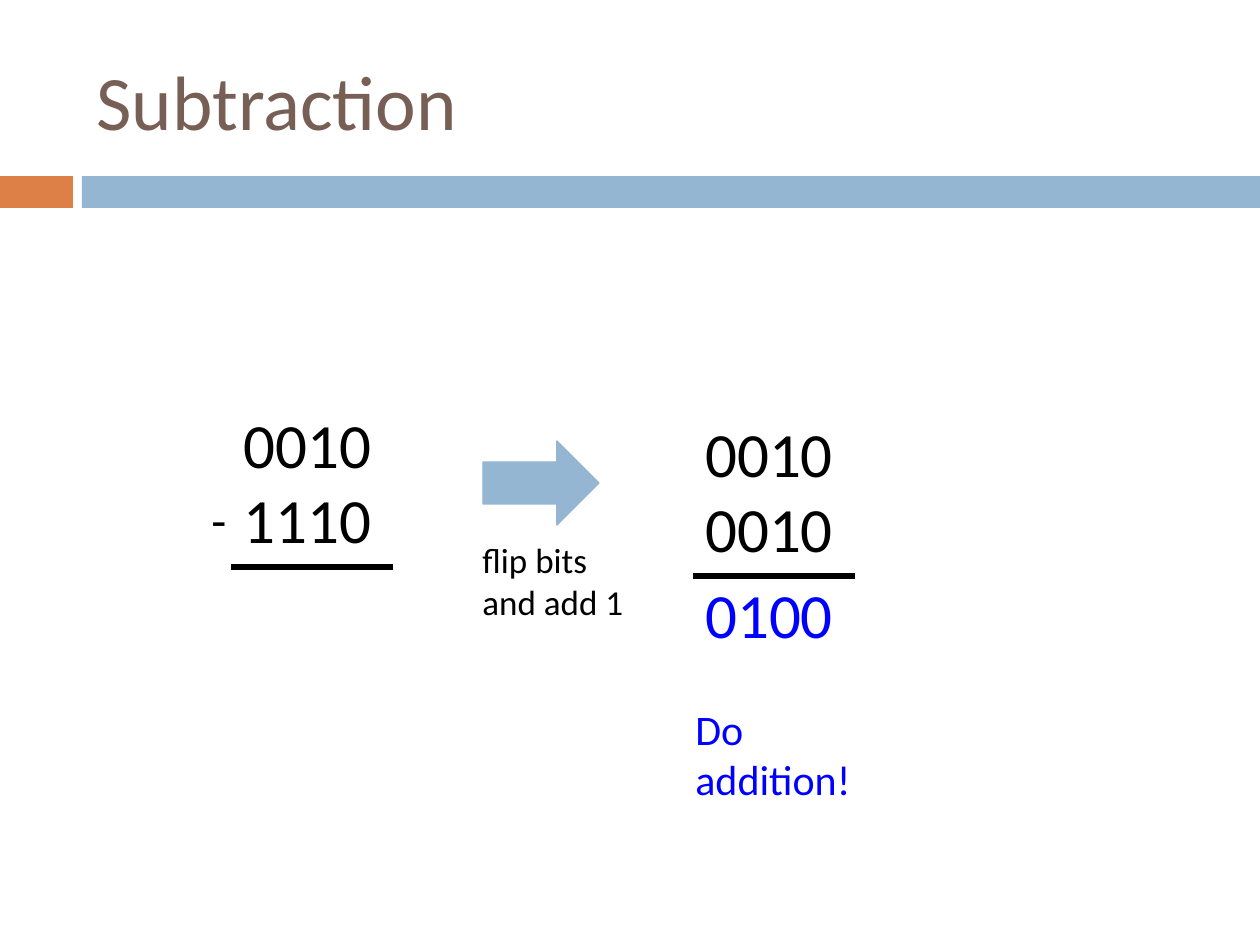
"""Build a slide that turns binary subtraction into addition."""
import pptx
import pptx.util
import pptx.dml.color
import pptx.enum.shapes
import pptx.enum.text
import pptx.oxml.ns
import lxml.etree

PX = 914400 / 126
INK = {"title": "775F55", "text": "000000", "sum": "0000FF",
       "blue": "94B6D2", "rust": "DD8047"}
KIND = pptx.enum.shapes.MSO_SHAPE

deck = pptx.Presentation()
deck.slide_width, deck.slide_height = round(1260 * PX), round(945 * PX)
slide = deck.slides.add_slide(deck.slide_layouts[5])
items = slide.shapes


def rgb(name):
    return pptx.dml.color.RGBColor.from_string(INK[name])


def put(text, box, size=36, ink="text", wrap=False, shape=None):
    fit = pptx.enum.text.MSO_AUTO_SIZE
    place = [round(n * PX) for n in box]
    if shape is None:
        shape = items.add_textbox(*place)
        mode = fit.SHAPE_TO_FIT_TEXT
    else:
        shape.left, shape.top, shape.width, shape.height = place
        mode = fit.NONE
    frame = shape.text_frame
    frame.text = text
    frame.word_wrap = wrap
    frame.auto_size = mode
    for para in frame.paragraphs:
        para.alignment = pptx.enum.text.PP_ALIGN.LEFT
        font = para.runs[0].font
        font.name, font.size = "Calibri", pptx.util.Pt(size)
        font.color.rgb = rgb(ink)
    return frame


blocks = [
    (KIND.RECTANGLE, (0, 176, 73, 32), "rust"),
    (KIND.RECTANGLE, (82, 176, 1178, 32), "blue"),
    (KIND.RIGHT_ARROW, (483, 441, 116, 84), "blue"),
]
for kind, box, ink in blocks:
    block = items.add_shape(kind, *[round(n * PX) for n in box])
    block.shadow.inherit = False
    block.fill.solid()
    block.fill.fore_color.rgb = rgb(ink)
    if kind == KIND.RIGHT_ARROW:
        block.line.color.rgb = rgb(ink)
        block.line.width = pptx.util.Pt(0.79)
    else:
        block.line.fill.background()

title = put("Subtraction", (84, 32, 1124, 136), size=44, ink="title",
            wrap=True, shape=items.title)
title.vertical_anchor = pptx.enum.text.MSO_ANCHOR.MIDDLE

for terms, left, top in [("0010\n1110", 231, 399), ("0010\n0010", 693, 408)]:
    put(terms, (left, top, 166, 165))
    ends = [round(n * PX) for n in (left, top + 168, left + 162, top + 168)]
    rule = items.add_connector(pptx.enum.shapes.MSO_CONNECTOR.STRAIGHT, *ends)
    rule.line.color.rgb = rgb("text")
    rule.line.width = pptx.util.Pt(3)
    props = rule._element.spPr
    lxml.etree.SubElement(props, pptx.oxml.ns.qn("a:effectLst"))

put("-", (199, 483, 42, 72), size=28)
put("flip bits and add 1", (470, 532, 181, 97), size=20, wrap=True)
put("0100", (693, 569, 166, 89), ink="sum")
put("Do addition!", (683, 697, 220, 63), size=24, ink="sum", wrap=True)

deck.save("out.pptx")
